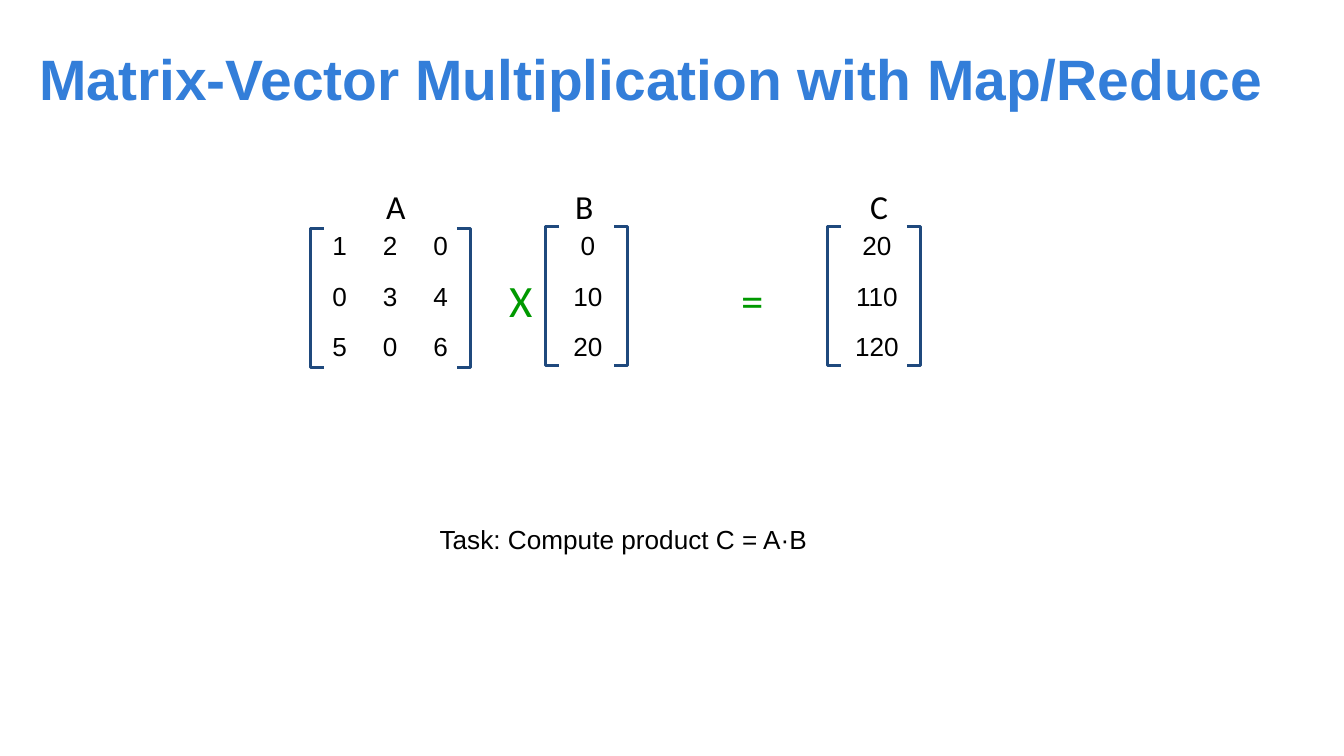
from dataclasses import dataclass

from pptx import Presentation
from pptx.dml.color import RGBColor
from pptx.enum.text import MSO_ANCHOR, PP_ALIGN
from pptx.slide import Slide
from pptx.util import Pt

TITLE_BLUE = RGBColor(0x33, 0x7E, 0xD9)
BRACKET_BLUE = RGBColor(0x1F, 0x49, 0x7D)
OPERATOR_GREEN = RGBColor(0x00, 0x99, 0x00)
BLACK = RGBColor(0x00, 0x00, 0x00)

LABEL_TOP = 98.6
FIRST_ROW_TOP = 119
CELL_HEIGHT = 27
BRACKET_HEIGHT = 74.4
BRACKET_ARM = 7.2


@dataclass(frozen=True)
class TextStyle:
    font: str
    size: float
    color: RGBColor
    bold: bool = False
    align: PP_ALIGN = PP_ALIGN.CENTER
    anchor: MSO_ANCHOR = MSO_ANCHOR.TOP
    line_spacing: float = 0.9
    margin: float = 3.6


@dataclass(frozen=True)
class Matrix:
    label: str
    label_center: float
    rows: tuple[tuple[str, ...], ...]
    first_column_center: float
    cell_width: float
    left: float
    right: float
    bracket_top: float


@dataclass(frozen=True)
class Operator:
    symbol: str
    center: float


TITLE = TextStyle("Arial", 30.5, TITLE_BLUE, bold=True, align=PP_ALIGN.LEFT,
                  anchor=MSO_ANCHOR.MIDDLE, line_spacing=0.8, margin=7.2)
TASK = TextStyle("Arial", 14, BLACK)
CELL = TextStyle("Arial", 14, BLACK, anchor=MSO_ANCHOR.MIDDLE)
LABEL = TextStyle("Calibri", 18, BLACK)
OPERATOR = TextStyle("Calibri", 24, OPERATOR_GREEN)

MATRICES = (
    Matrix("A", 212, (("1", "2", "0"), ("0", "3", "4"), ("5", "0", "6")),
           182, 27, 166.3, 252, 122.6),
    Matrix("B", 313, (("0",), ("10",), ("20",)), 315, 30, 292.4, 336.2, 121.5),
    Matrix("C", 471, (("20",), ("110",), ("120",)), 469.8, 40, 443.4, 493, 121.5),
)
OPERATORS = (Operator("X", 279), Operator("=", 403))


def add_text(slide: Slide, text: str, left: float, top: float,
             width: float, height: float, style: TextStyle) -> None:
    shape = slide.shapes.add_textbox(Pt(left), Pt(top), Pt(width), Pt(height))
    frame = shape.text_frame
    frame.word_wrap = True
    frame.vertical_anchor = style.anchor
    frame.margin_left = frame.margin_right = Pt(style.margin)
    frame.margin_top = frame.margin_bottom = Pt(3.6)
    paragraph = frame.paragraphs[0]
    paragraph.text = text
    paragraph.alignment = style.align
    paragraph.line_spacing = style.line_spacing
    paragraph.font.name = style.font
    paragraph.font.size = Pt(style.size)
    paragraph.font.bold = style.bold
    paragraph.font.color.rgb = style.color


def add_bracket(slide: Slide, spine: float, arm_end: float, top: float) -> None:
    bottom = top + BRACKET_HEIGHT
    builder = slide.shapes.build_freeform(Pt(arm_end), Pt(top))
    corners = ((spine, top), (spine, bottom), (arm_end, bottom))
    builder.add_line_segments([(Pt(x), Pt(y)) for x, y in corners], close=False)
    shape = builder.convert_to_shape()
    shape.shadow.inherit = False
    shape.fill.background()
    shape.line.color.rgb = BRACKET_BLUE
    shape.line.width = Pt(1.5)


def add_matrix(slide: Slide, matrix: Matrix) -> None:
    add_text(slide, matrix.label, matrix.label_center - 20, LABEL_TOP, 40, 20, LABEL)
    for row, values in enumerate(matrix.rows):
        for column, value in enumerate(values):
            center = matrix.first_column_center + column * matrix.cell_width
            add_text(slide, value, center - matrix.cell_width / 2,
                     FIRST_ROW_TOP + row * CELL_HEIGHT,
                     matrix.cell_width, CELL_HEIGHT, CELL)
    add_bracket(slide, matrix.left, matrix.left + BRACKET_ARM, matrix.bracket_top)
    add_bracket(slide, matrix.right, matrix.right - BRACKET_ARM, matrix.bracket_top)


def main() -> None:
    presentation = Presentation()
    presentation.slide_width = Pt(720)
    presentation.slide_height = Pt(405)
    slide = presentation.slides.add_slide(presentation.slide_layouts[6])
    add_text(slide, "Matrix-Vector Multiplication with Map/Reduce",
             14, 8, 692, 74, TITLE)
    add_text(slide, "Task: Compute product C = A·B", 70.5, 278.6, 527, 43, TASK)
    for matrix in MATRICES:
        add_matrix(slide, matrix)
    for operator in OPERATORS:
        add_text(slide, operator.symbol, operator.center - 13, 146, 26, 25, OPERATOR)
    presentation.save("out.pptx")


if __name__ == "__main__":
    main()
